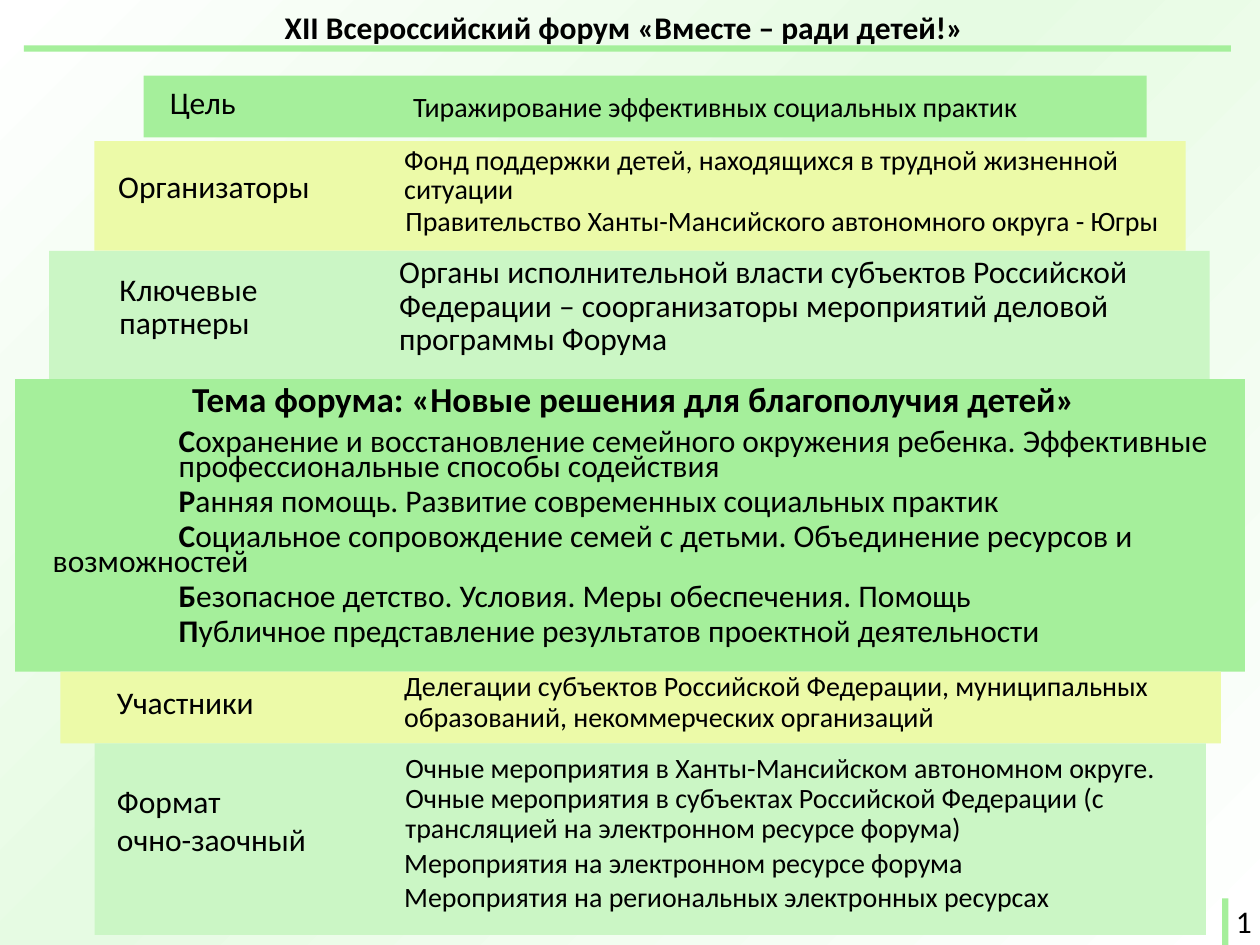
from copy import deepcopy
from typing import NamedTuple

from pptx import Presentation
from pptx.dml.color import RGBColor
from pptx.enum.shapes import MSO_SHAPE as Preset
from pptx.enum.text import MSO_ANCHOR as Anchor, MSO_AUTO_SIZE as AutoSize, PP_ALIGN as Align
from pptx.oxml.ns import qn
from pptx.slide import Slide
from pptx.text.text import TextFrame
from pptx.util import Emu, Pt

PX = 9144
GREEN, YELLOW, PALE, BLACK = "A5EF9B", "ECFAA8", "CBF6C5", "000000"
FONT = "Calibri"


class Box(NamedTuple):
    left: int
    top: int
    width: int
    height: int


class Band(NamedTuple):
    box: Box
    color: str


class Line(NamedTuple):
    text: str
    lead: str = ""
    spacing: float = 0
    after: int = 0
    margin: int = 0
    indent: int = 0
    align: Align = Align.LEFT
    bold: bool = False


class Note(NamedTuple):
    box: Box
    size: int
    lines: list[Line]


BANDS = [
    Band(Box(19, 36, 958, 5), GREEN),
    Band(Box(114, 60, 796, 49), GREEN),
    Band(Box(75, 112, 866, 87), YELLOW),
    Band(Box(39, 199, 921, 102), PALE),
    Band(Box(12, 301, 976, 232), GREEN),
    Band(Box(48, 533, 921, 57), YELLOW),
    Band(Box(75, 590, 882, 152), PALE),
    Band(Box(970, 713, 5, 37), GREEN),
]

HEADING = Note(Box(11, 1, 969, 71), 18, [
    Line("XII Всероссийский форум «Вместе – ради детей!»", align=Align.CENTER, bold=True)])

LABELS = [
    Note(Box(125, 61, 97, 40), 18, [Line("Цель")]),
    Note(Box(84, 128, 197, 40), 18, [Line("Организаторы")]),
    Note(Box(85, 213, 134, 63), 18, [Line("Ключевые партнеры", spacing=19)]),
    Note(Box(83, 537, 138, 40), 18, [Line("Участники")]),
    Note(Box(83, 616, 178, 71), 18, [Line("Формат"), Line("очно-заочный")]),
    Note(Box(971, 711, 33, 40), 18, [Line("1")]),
]

DETAILS = [
    Note(Box(318, 66, 643, 37), 16, [Line("Тиражирование эффективных социальных практик")]),
    Note(Box(311, 111, 662, 58), 16, [
        Line("Фонд поддержки детей, находящихся в трудной жизненной ситуации", spacing=17)]),
    Note(Box(312, 157, 646, 37), 16, [
        Line("Правительство Ханты-Мансийского автономного округа - Югры")]),
    Note(Box(307, 199, 654, 90), 18, [
        Line("Органы исполнительной власти субъектов Российской Федерации – "
             "соорганизаторы мероприятий деловой программы Форума", spacing=19)]),
    Note(Box(311, 527, 617, 61), 16, [
        Line("Делегации субъектов Российской Федерации, муниципальных образований, "
             "некоммерческих организаций", spacing=18)]),
    Note(Box(312, 594, 664, 82), 16, [
        Line("Очные мероприятия в Ханты-Мансийском автономном округе. "
             "Очные мероприятия в субъектах Российской Федерации "
             "(с трансляцией на электронном ресурсе форума)", spacing=17, after=6)]),
    Note(Box(311, 666, 599, 37), 16, [Line("Мероприятия на электронном ресурсе форума")]),
    Note(Box(311, 693, 587, 37), 16, [Line("Мероприятия на региональных электронных ресурсах")]),
]

THEME = [
    Note(Box(50, 295, 906, 44), 20, [
        Line("Тема форума: «Новые решения для благополучия детей»",
             align=Align.CENTER, bold=True)]),
    Note(Box(32, 339, 941, 181), 18, [
        Line("охранение и восстановление семейного окружения ребенка. Эффективные "
             "профессиональные способы содействия", "С", 14.4, 6, margin=100),
        Line("анняя помощь. Развитие современных социальных практик", "Р", 14, 6, indent=100),
        Line("оциальное сопровождение семей с детьми. Объединение ресурсов и возможностей",
             "С", 14, 6, indent=100),
        Line("езопасное детство. Условия. Меры обеспечения. Помощь", "Б", 14, 6, indent=100),
        Line("убличное представление результатов проектной деятельности",
             "П", 14.4, indent=100)]),
]


def rgb(color: str) -> RGBColor:
    """Turn a hex string into a colour."""
    return RGBColor.from_string(color)


def emu(box: Box) -> list[Emu]:
    """Scale a box from px to EMU."""
    return [Emu(length * PX) for length in box]


def paint_background(slide: Slide) -> None:
    """Give the slide its diagonal three-stop gradient."""
    fill = slide.background.fill
    fill.gradient()
    fill.gradient_angle = 315
    stop_list = slide.element.find(".//" + qn("a:gsLst"))
    stop_list.append(deepcopy(stop_list[0]))
    stops = [(0, "FFFFFF"), (0.45, "E6FBE3"), (1, "FFFFFF")]
    for stop, (position, color) in zip(fill.gradient_stops, stops):
        stop.position = position
        stop.color.rgb = rgb(color)


def draw_band(slide: Slide, band: Band) -> None:
    """Draw a plain coloured rectangle."""
    rectangle = slide.shapes.add_shape(Preset.RECTANGLE, *emu(band.box))
    rectangle.shadow.inherit = False
    rectangle.fill.solid()
    rectangle.fill.fore_color.rgb = rgb(band.color)
    rectangle.line.fill.background()


def write_lines(frame: TextFrame, note: Note) -> None:
    """Fill a text frame with the formatted lines of a note."""
    frame.word_wrap = True
    frame.auto_size = AutoSize.NONE
    frame.vertical_anchor = Anchor.TOP
    for index, line in enumerate(note.lines):
        paragraph = frame.add_paragraph() if index else frame.paragraphs[0]
        paragraph.alignment = line.align
        paragraph.space_after = Pt(line.after)
        paragraph.line_spacing = Pt(line.spacing) if line.spacing else 1.0
        properties = paragraph._p.get_or_add_pPr()
        properties.set("marL", str(line.margin * PX))
        properties.set("indent", str(line.indent * PX))
        for text, bold in ((line.lead, True), (line.text, line.bold)):
            if text:
                run = paragraph.add_run()
                run.text = text
                run.font.name = FONT
                run.font.size = Pt(note.size)
                run.font.bold = bold
                run.font.color.rgb = rgb(BLACK)


def draw_heading(slide: Slide, note: Note) -> None:
    """Place and fill the title placeholder."""
    title = slide.shapes.title
    title.left, title.top, title.width, title.height = emu(note.box)
    write_lines(title.text_frame, note)


def draw_note(slide: Slide, note: Note) -> None:
    """Add a text box for a note."""
    write_lines(slide.shapes.add_textbox(*emu(note.box)).text_frame, note)


def main() -> None:
    """Build and save the forum slide."""
    deck = Presentation()
    deck.slide_width, deck.slide_height = Emu(1000 * PX), Emu(750 * PX)
    slide = deck.slides.add_slide(deck.slide_layouts[5])
    paint_background(slide)
    draw_heading(slide, HEADING)
    for band in BANDS:
        draw_band(slide, band)
    for note in LABELS + DETAILS + THEME:
        draw_note(slide, note)
    deck.save("out.pptx")


if __name__ == "__main__":
    main()
